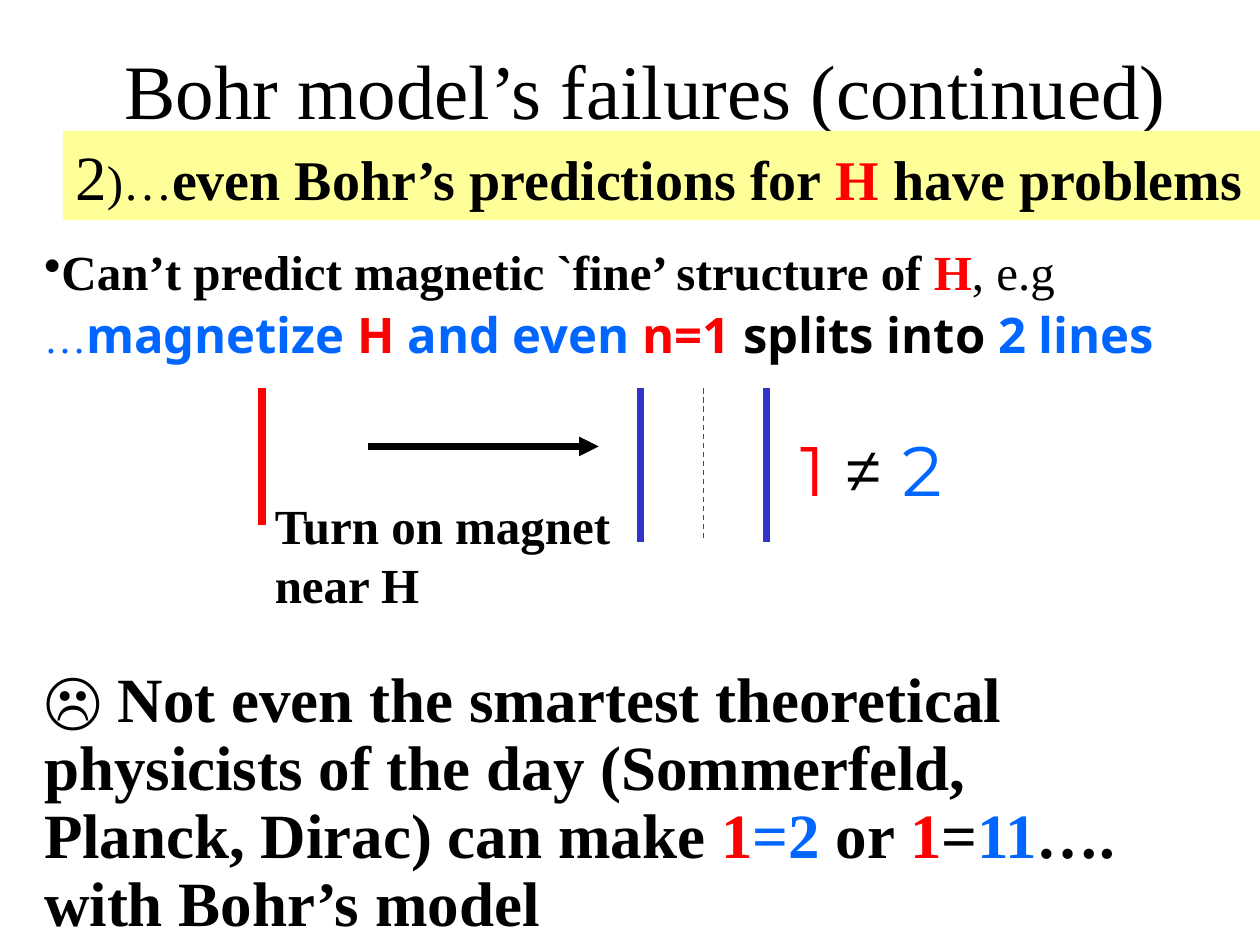
import dataclasses
import typing

import lxml.etree
import pptx
import pptx.dml.color
import pptx.enum.dml
import pptx.enum.shapes
import pptx.enum.text
import pptx.oxml
import pptx.oxml.ns
import pptx.slide
import pptx.util

Cm = pptx.util.Cm


@dataclasses.dataclass(frozen=True)
class Theme:
    serif: str = "Times New Roman"
    sans: str = "Noto Sans"
    display: str = "Montserrat"
    black: str = "000000"
    red: str = "FF0000"
    blue: str = "0066FF"
    split_line: str = "3333CC"
    banner: str = "FFFF99"
    title: int = 44
    equation: int = 40
    conclusion: int = 36
    heading: int = 32
    body: int = 28
    small: int = 24


THEME = Theme()


class Words(typing.NamedTuple):
    text: str
    color: str = THEME.black
    size: int = THEME.body
    bold: bool = True
    font: str = THEME.serif


class Paragraph(typing.NamedTuple):
    words: list[Words]
    space_before: int = 0
    line_spacing: float | None = None
    bullet: str = ""
    align: pptx.enum.text.PP_ALIGN = pptx.enum.text.PP_ALIGN.LEFT


class Block(typing.NamedTuple):
    left: float
    top: float
    width: float
    height: float
    paragraphs: list[Paragraph]
    fill: str = ""
    centered: bool = False


class Stroke(typing.NamedTuple):
    start: tuple[float, float]
    end: tuple[float, float]
    color: str
    width: float
    dashed: bool = False
    arrow: bool = False


def rgb(color: str) -> pptx.dml.color.RGBColor:
    return pptx.dml.color.RGBColor.from_string(color)


def add_element(parent: lxml.etree.ElementBase, tag: str, **attributes: str) -> lxml.etree.ElementBase:
    return lxml.etree.SubElement(parent, pptx.oxml.ns.qn(tag), attributes)


def write_paragraph(paragraph: typing.Any, content: Paragraph) -> None:
    paragraph.alignment = content.align
    if content.line_spacing:
        paragraph.line_spacing = content.line_spacing
    properties = paragraph._p.get_or_add_pPr()
    if content.space_before:
        spacing = add_element(properties, "a:spcBef")
        add_element(spacing, "a:spcPct", val=str(content.space_before * 1000))
    if content.bullet:
        add_element(properties, "a:buChar", char=content.bullet)
    for words in content.words:
        run = paragraph.add_run()
        run.text = words.text
        run.font.name = words.font
        run.font.size = pptx.util.Pt(words.size)
        run.font.bold = words.bold
        run.font.color.rgb = rgb(words.color)


def draw_block(slide: pptx.slide.Slide, block: Block) -> None:
    area = Cm(block.left), Cm(block.top), Cm(block.width), Cm(block.height)
    if block.fill:
        shape = slide.shapes.add_shape(pptx.enum.shapes.MSO_SHAPE.RECTANGLE, *area)
        shape.shadow.inherit = False
        shape.fill.solid()
        shape.fill.fore_color.rgb = rgb(block.fill)
        shape.line.fill.background()
    else:
        shape = slide.shapes.add_textbox(*area)
    frame = shape.text_frame
    frame.word_wrap = True
    anchors = pptx.enum.text.MSO_ANCHOR
    frame.vertical_anchor = anchors.MIDDLE if block.centered else anchors.TOP
    if not block.centered:
        frame.auto_size = pptx.enum.text.MSO_AUTO_SIZE.SHAPE_TO_FIT_TEXT
    for index, content in enumerate(block.paragraphs):
        write_paragraph(frame.add_paragraph() if index else frame.paragraphs[0], content)


def draw_stroke(slide: pptx.slide.Slide, stroke: Stroke) -> None:
    connector = slide.shapes.add_connector(
        pptx.enum.shapes.MSO_CONNECTOR.STRAIGHT,
        *map(Cm, stroke.start + stroke.end),
    )
    connector.line.color.rgb = rgb(stroke.color)
    connector.line.width = pptx.util.Pt(stroke.width)
    if stroke.dashed:
        connector.line.dash_style = pptx.enum.dml.MSO_LINE.DASH
    if stroke.arrow:
        add_element(connector.line._get_or_add_ln(), "a:tailEnd", type="triangle")
    add_element(connector._element.spPr, "a:effectLst")


def spectral_line(x: float, bottom: float, color: str, width: float, dashed: bool = False) -> Stroke:
    return Stroke((x, 7.83), (x, bottom), color, width, dashed)


TITLE = Block(2.22, 0.2, 21.6, 3.18, [
    Paragraph([Words("Bohr model’s failures (continued)", size=THEME.title, bold=False)],
              align=pptx.enum.text.PP_ALIGN.CENTER),
], centered=True)

FINE_STRUCTURE = Block(0.64, 4.88, 24.77, 4.19, [
    Paragraph([
        Words("Can’t predict magnetic `fine’ structure of "),
        Words("H", THEME.red),
        Words(", e.g", bold=False),
    ], 20, 0.9, "•"),
    Paragraph([
        Words("…", THEME.blue, THEME.small, bold=False),
        Words("magnetize ", THEME.blue, font=THEME.sans),
        Words("H", THEME.red, font=THEME.sans),
        Words(" and even ", THEME.blue, font=THEME.sans),
        Words("n=1 ", THEME.red, font=THEME.sans),
        Words("splits into ", font=THEME.sans),
        Words("2 lines", THEME.blue, font=THEME.sans),
    ], 20, 0.9),
])

MAGNET = Block(5.29, 9.86, 8.46, 2.64, [Paragraph([Words("Turn on magnet near H")], 50)])

INEQUALITY = Block(15.88, 8.47, 5.08, 1.96, [
    Paragraph([
        Words(text, color, THEME.equation, False, THEME.display)
        for text, color in (("1 ", THEME.red), ("≠ ", THEME.black), ("2", THEME.blue))
    ], 50),
])

CONCLUSION = Block(0.64, 13.34, 23.29, 7.34, [
    Paragraph([
        Words(text, color, THEME.conclusion)
        for text, color in (
            ("☹ Not even the smartest theoretical physicists of the day "
             "(Sommerfeld, Planck, Dirac) can make ", THEME.black),
            ("1", THEME.red),
            ("=2", THEME.blue),
            (" or ", THEME.black),
            ("1", THEME.red),
            ("=", THEME.black),
            ("11", THEME.blue),
            ("…. with Bohr’s model", THEME.black),
        )
    ], 20, 0.9),
])

BANNER = Block(1.27, 2.64, 24.13, 1.8, [
    Paragraph([
        Words("2", size=THEME.conclusion, bold=False),
        Words(")…", bold=False),
        Words("even Bohr’s predictions for ", size=THEME.heading),
        Words("H", THEME.red, THEME.heading),
        Words(" have problems", size=THEME.heading),
    ], 50),
], THEME.banner)

SPLITTING = [
    spectral_line(5.29, 10.58, THEME.red, 4.5),
    Stroke((7.41, 9), (12.07, 9), THEME.black, 3.75, arrow=True),
    spectral_line(12.91, 10.92, THEME.split_line, 4),
    spectral_line(15.45, 10.92, THEME.split_line, 4.25),
]
UNSPLIT_POSITION = spectral_line(14.18, 10.92, THEME.red, 0.75, dashed=True)


def main() -> None:
    deck = pptx.Presentation()
    deck.slide_width, deck.slide_height = Cm(25.4), Cm(19.05)
    slide = deck.slides.add_slide(deck.slide_layouts[6])
    for block in (TITLE, FINE_STRUCTURE):
        draw_block(slide, block)
    for stroke in SPLITTING:
        draw_stroke(slide, stroke)
    for block in (MAGNET, INEQUALITY, CONCLUSION, BANNER):
        draw_block(slide, block)
    draw_stroke(slide, UNSPLIT_POSITION)
    deck.save("out.pptx")


if __name__ == "__main__":
    main()
